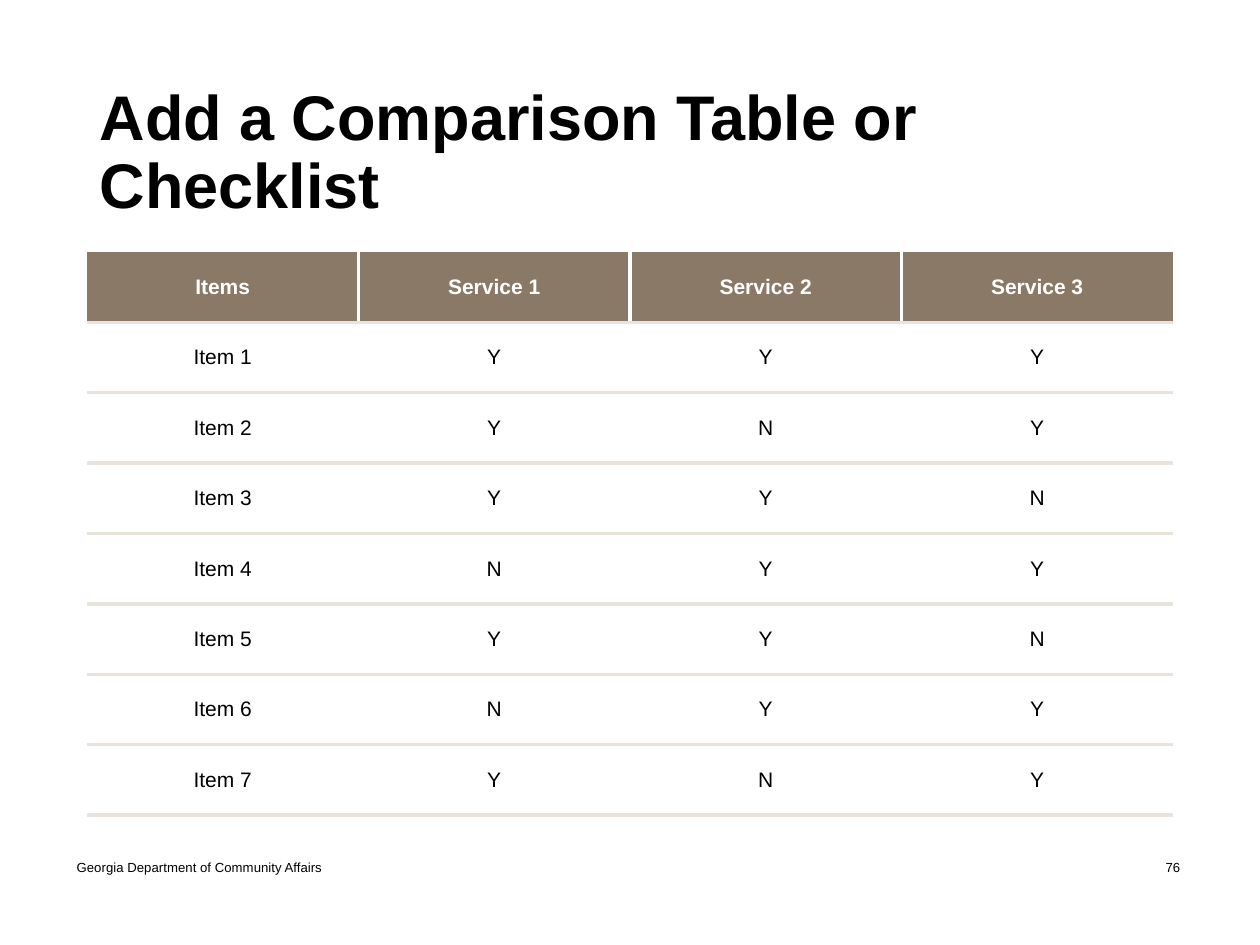
import dataclasses
import typing

import pptx
import pptx.dml.color
import pptx.enum.text
import pptx.oxml
import pptx.oxml.ns
import pptx.util
from pptx.util import Inches

ALIGN = pptx.enum.text.PP_ALIGN
MIDDLE = pptx.enum.text.MSO_ANCHOR.MIDDLE
BLACK, WHITE, BROWN, SAND = "000000", "FFFFFF", "8A7967", "E9E3DC"
RULE_WIDTH = pptx.util.Pt(2.25)


@dataclasses.dataclass
class Label:
    text: str
    left: float
    top: float
    width: float
    height: float
    align: ALIGN


LABELS = [
    Label("Georgia Department of Community Affairs", 0.51, 6.68, 3.38, 0.4, ALIGN.LEFT),
    Label("76", 9.06, 6.51, 0.5, 0.74, ALIGN.CENTER),
]
HEADER = ["Items", "Service 1", "Service 2", "Service 3"]
ANSWERS = ["YYY", "YNY", "YYN", "NYY", "YYN", "NYY", "YNY"]


def color(value: str) -> pptx.dml.color.RGBColor:
    return pptx.dml.color.RGBColor.from_string(value)


def write(tf: typing.Any, text: str, size: float, fill: str = BLACK,
          bold: bool = False, align: ALIGN = ALIGN.LEFT) -> typing.Any:
    """Write one formatted paragraph and return it."""
    p = tf.paragraphs[0]
    p.alignment = align
    r = p.add_run()
    r.text = text
    font = {"name": "Arial", "size": pptx.util.Pt(size), "bold": bold}
    for name, value in font.items():
        setattr(r.font, name, value)
    r.font.color.rgb = color(fill)
    return p


def set_borders(cell: typing.Any, borders: dict[str, str]) -> None:
    """Draw the given sides (L, R, T, B) and clear the others."""
    tcPr = cell._tc.get_or_add_tcPr()
    for side in "LRTB":
        if side in borders:
            paint = f'<a:solidFill><a:srgbClr val="{borders[side]}"/></a:solidFill>'
        else:
            paint = "<a:noFill/>"
        tcPr.append(pptx.oxml.parse_xml(
            f'<a:ln{side} {pptx.oxml.ns.nsdecls("a")} w="{RULE_WIDTH}">{paint}</a:ln{side}>'))


def add_label(s: typing.Any, label: Label) -> None:
    sp = s.shapes.add_textbox(*map(Inches, (label.left, label.top, label.width, label.height)))
    tf = sp.text_frame
    tf.word_wrap = True
    tf.vertical_anchor = MIDDLE
    write(tf, label.text, 7.5, align=label.align)


def add_checklist(s: typing.Any, rows: list[list[str]]) -> None:
    last = len(rows[0]) - 1
    table = s.shapes.add_table(len(rows), last + 1, Inches(0.69), Inches(2),
                               Inches(8.62), Inches(4.47)).table
    table.horz_banding = False
    margins = {"margin_left": 0.07, "margin_right": 0.07,
               "margin_top": 0.04, "margin_bottom": 0.04}
    for i, row in enumerate(rows):
        head = i == 0
        for j, text in enumerate(row):
            cell = table.cell(i, j)
            for name, value in margins.items():
                setattr(cell, name, Inches(value))
            cell.vertical_anchor = MIDDLE
            # Sand rules between rows, white gaps between header cells
            borders = {"B": SAND}
            if not head:
                borders["T"] = SAND
            if head and j > 0:
                borders["L"] = WHITE
            if head and j < last:
                borders["R"] = WHITE
            set_borders(cell, borders)
            if head:
                cell.fill.solid()
                cell.fill.fore_color.rgb = color(BROWN)
            else:
                cell.fill.background()
            write(cell.text_frame, text, 12, WHITE if head else BLACK, head, ALIGN.CENTER)


def add_title(s: typing.Any, text: str) -> None:
    sp = s.shapes.title
    box = {"left": 0.69, "top": 0.6, "width": 8.61, "height": 1.25}
    for name, value in box.items():
        setattr(sp, name, Inches(value))
    tf = sp.text_frame
    tf.word_wrap = True
    tf.auto_size = pptx.enum.text.MSO_AUTO_SIZE.NONE
    tf.vertical_anchor = MIDDLE
    write(tf, text, 36, bold=True).line_spacing = 0.9


def main() -> None:
    prs = pptx.Presentation()
    prs.slide_width, prs.slide_height = Inches(10), Inches(7.5)
    s = prs.slides.add_slide(prs.slide_layouts[5])

    # Footer and page number
    for label in LABELS:
        add_label(s, label)

    # Comparison table
    items = [[f"Item {n}", *answers] for n, answers in enumerate(ANSWERS, 1)]
    add_checklist(s, [HEADER, *items])

    # Title
    add_title(s, "Add a Comparison Table or Checklist")
    prs.save("out.pptx")


if __name__ == "__main__":
    main()
